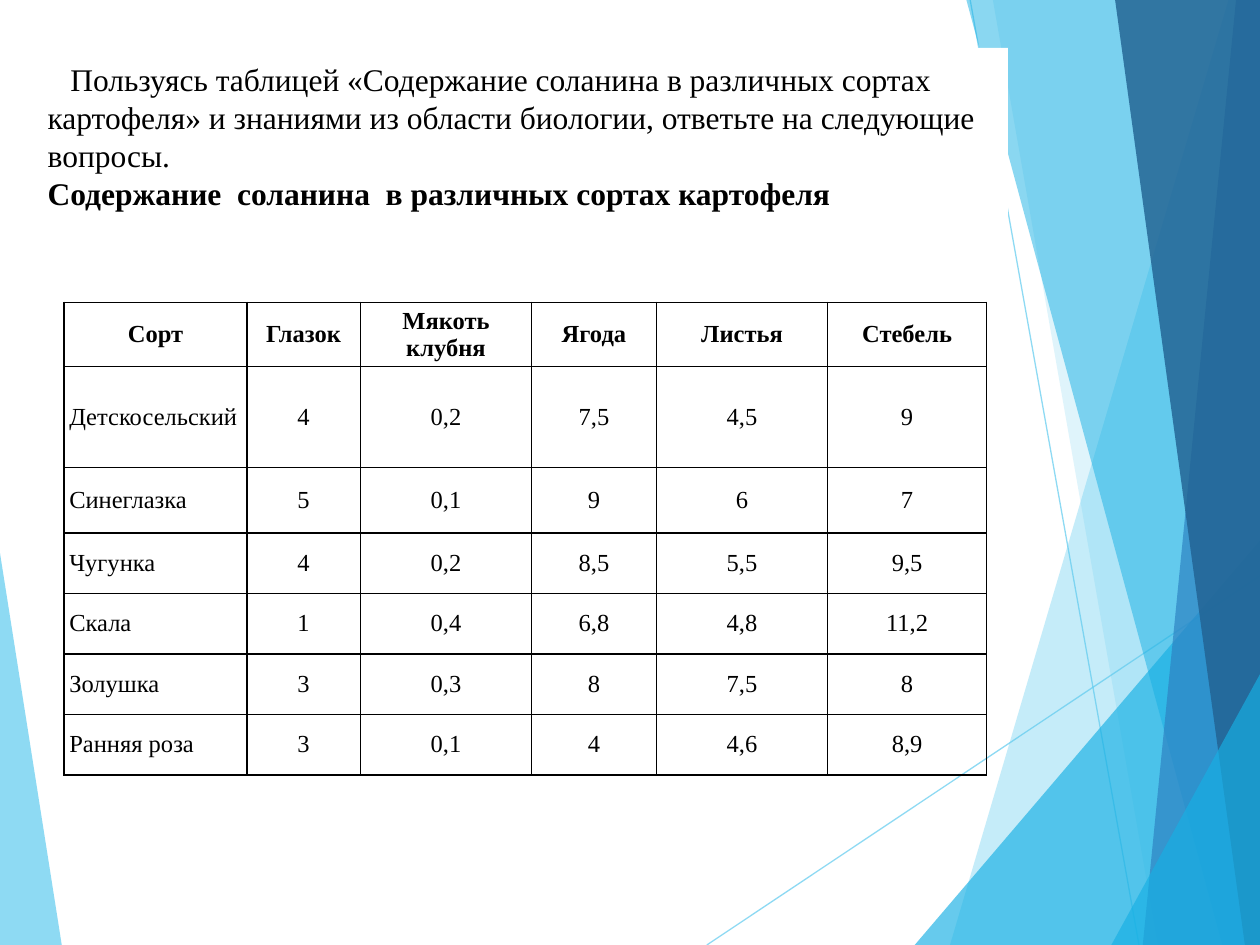
import lxml.etree
import pptx
import pptx.dml.color
import pptx.enum.shapes
import pptx.enum.text
import pptx.oxml.ns
import pptx.util

COLUMNS, ROWS = 100, 75  # grid of the slide
ALIGN = pptx.enum.text.PP_ALIGN
ANCHOR = pptx.enum.text.MSO_ANCHOR

# colour, opacity in percent, corners in grid cells
LEFT_FACET = ("5FCBEF", 70, [(0, 43.9), (4.9, 75), (0, 75)])
RIGHT_FACETS = [
    ("5FCBEF", 36, [(97.5, 0), (75.4, 75), (100, 75), (100, 0)]),
    ("5FCBEF", 20, [(78.8, 0), (91.9, 75), (100, 75), (100, 0)]),
    ("17B0E4", 66, [(72.6, 75), (100, 42.9), (100, 75)]),
    ("17B0E4", 50, [(76.7, 0), (97, 75), (100, 75), (100, 0)]),
    ("2E83C3", 70, [(98.1, 0), (90.7, 75), (100, 75), (100, 0)]),
    ("226292", 82, [(88.5, 0), (98.8, 75), (100, 75), (100, 0)]),
    ("17B0E4", 66, [(88.2, 75), (100, 53.5), (100, 75)]),
]
RAYS = [((56.1, 75), (100, 45.7)), ((77, 0), (90.4, 75))]

SOLANINE = [
    ["Сорт", "Глазок", "Мякоть\nклубня", "Ягода", "Листья", "Стебель"],
    ["Детскосельский", "4", "0,2", "7,5", "4,5", "9"],
    ["Синеглазка", "5", "0,1", "9", "6", "7"],
    ["Чугунка", "4", "0,2", "8,5", "5,5", "9,5"],
    ["Скала", "1", "0,4", "6,8", "4,8", "11,2"],
    ["Золушка", "3", "0,3", "8", "7,5", "8"],
    ["Ранняя роза", "3", "0,1", "4", "4,6", "8,9"],
]
COLUMN_WIDTHS = [14.5, 9, 13.6, 9.9, 13.6, 12.6]
ROW_HEIGHTS = [5.1, 8, 5.2] + [4.8] * 4

TASK = ("Пользуясь таблицей «Содержание соланина в различных сортах картофеля» "
        "и знаниями из области биологии, ответьте на следующие вопросы.")
TABLE_TITLE = "Содержание  соланина  в различных сортах картофеля"


def rgb(value):
    return pptx.dml.color.RGBColor.from_string(value)


def add_child(parent, tag, **attributes):
    return lxml.etree.SubElement(parent, pptx.oxml.ns.qn(tag), attributes)


class SlideBuilder:
    font = "Times New Roman"
    ink = "000000"
    paper = "FFFFFF"

    def __init__(self, presentation):
        self.slide = presentation.slides.add_slide(presentation.slide_layouts[6])
        self.shapes = self.slide.shapes
        self.column = presentation.slide_width / COLUMNS
        self.row = presentation.slide_height / ROWS

    def x(self, columns):
        return round(columns * self.column)

    def y(self, rows):
        return round(rows * self.row)

    def point(self, corner):
        return self.x(corner[0]), self.y(corner[1])

    def paint(self, fill, properties, color, opacity):
        """Fill with a see-through colour; properties is the XML that holds the fill."""
        fill.solid()
        fill.fore_color.rgb = rgb(color)
        for srgb in properties.iter(pptx.oxml.ns.qn("a:srgbClr")):
            add_child(srgb, "a:alpha", val=str(opacity * 1000))

    def facet(self, color, opacity, corners):
        start, *others = [self.point(corner) for corner in corners]
        outline = self.shapes.build_freeform(*start)
        outline.add_line_segments(others, close=True)
        facet = outline.convert_to_shape()
        facet.shadow.inherit = False
        facet.line.fill.background()
        self.paint(facet.fill, facet._element.spPr, color, opacity)

    def ray(self, start, end):
        ray = self.shapes.add_connector(
            pptx.enum.shapes.MSO_CONNECTOR.STRAIGHT, *self.point(start), *self.point(end))
        ray.line.width = pptx.util.Pt(0.75)
        self.paint(ray.line.fill, ray._element.spPr, "5FCBEF", 70)
        add_child(ray._element.spPr, "a:effectLst")

    def add_text(self, paragraph, text, size, bold=False, align=ALIGN.LEFT):
        paragraph.alignment = align
        run = paragraph.add_run()
        run.text = text
        run.font.name = self.font
        run.font.size = pptx.util.Pt(size)
        run.font.bold = bold
        run.font.color.rgb = rgb(self.ink)

    def panel(self, left, top, width, height, task, title):
        panel = self.shapes.add_shape(
            pptx.enum.shapes.MSO_SHAPE.RECTANGLE,
            self.x(left), self.y(top), self.x(width), self.y(height))
        panel.shadow.inherit = False
        panel.line.fill.background()
        panel.fill.solid()
        panel.fill.fore_color.rgb = rgb(self.paper)
        frame = panel.text_frame
        frame.word_wrap = True
        frame.vertical_anchor = ANCHOR.TOP
        frame.margin_left = frame.margin_right = self.x(1)
        frame.margin_top = frame.margin_bottom = self.y(1)
        opening = frame.paragraphs[0]
        self.add_text(opening, task, 18)
        opening._p.get_or_add_pPr().set("indent", str(self.x(1.8)))
        self.add_text(frame.add_paragraph(), title, 18, bold=True)

    def border(self, cell):
        properties = cell._tc.get_or_add_tcPr()
        for side in ("a:lnL", "a:lnR", "a:lnT", "a:lnB"):
            line = add_child(properties, side, w=str(pptx.util.Pt(1)))
            add_child(add_child(line, "a:solidFill"), "a:srgbClr", val=self.ink)

    def table(self, left, top, widths, heights, rows):
        table = self.shapes.add_table(
            len(heights), len(widths), self.x(left), self.y(top),
            self.x(sum(widths)), self.y(sum(heights))).table
        table.first_row = table.horz_banding = False
        for column, width in zip(table.columns, widths):
            column.width = self.x(width)
        for row, height in zip(table.rows, heights):
            row.height = self.y(height)
        for r, row in enumerate(rows):
            for c, text in enumerate(row):
                is_variety = r > 0 and c == 0
                self.cell(table.cell(r, c), text, bold=r == 0,
                          align=ALIGN.LEFT if is_variety else ALIGN.CENTER)

    def cell(self, cell, text, bold, align):
        self.border(cell)
        cell.fill.background()
        cell.vertical_anchor = ANCHOR.MIDDLE
        cell.margin_left = cell.margin_right = self.x(0.4)
        cell.margin_top = cell.margin_bottom = self.y(0.4)
        for i, line in enumerate(text.split("\n")):
            frame = cell.text_frame
            paragraph = frame.add_paragraph() if i else frame.paragraphs[0]
            self.add_text(paragraph, line, 14, bold, align)


def main():
    presentation = pptx.Presentation()
    presentation.slide_width = pptx.util.Inches(10)
    presentation.slide_height = pptx.util.Inches(7.5)
    builder = SlideBuilder(presentation)
    builder.facet(*LEFT_FACET)
    for ray in RAYS:
        builder.ray(*ray)
    for facet in RIGHT_FACETS:
        builder.facet(*facet)
    builder.table(5.1, 24, COLUMN_WIDTHS, ROW_HEIGHTS, SOLANINE)
    builder.panel(2.8, 3.8, 77.2, 20.1, TASK, TABLE_TITLE)
    presentation.save("out.pptx")


if __name__ == "__main__":
    main()
